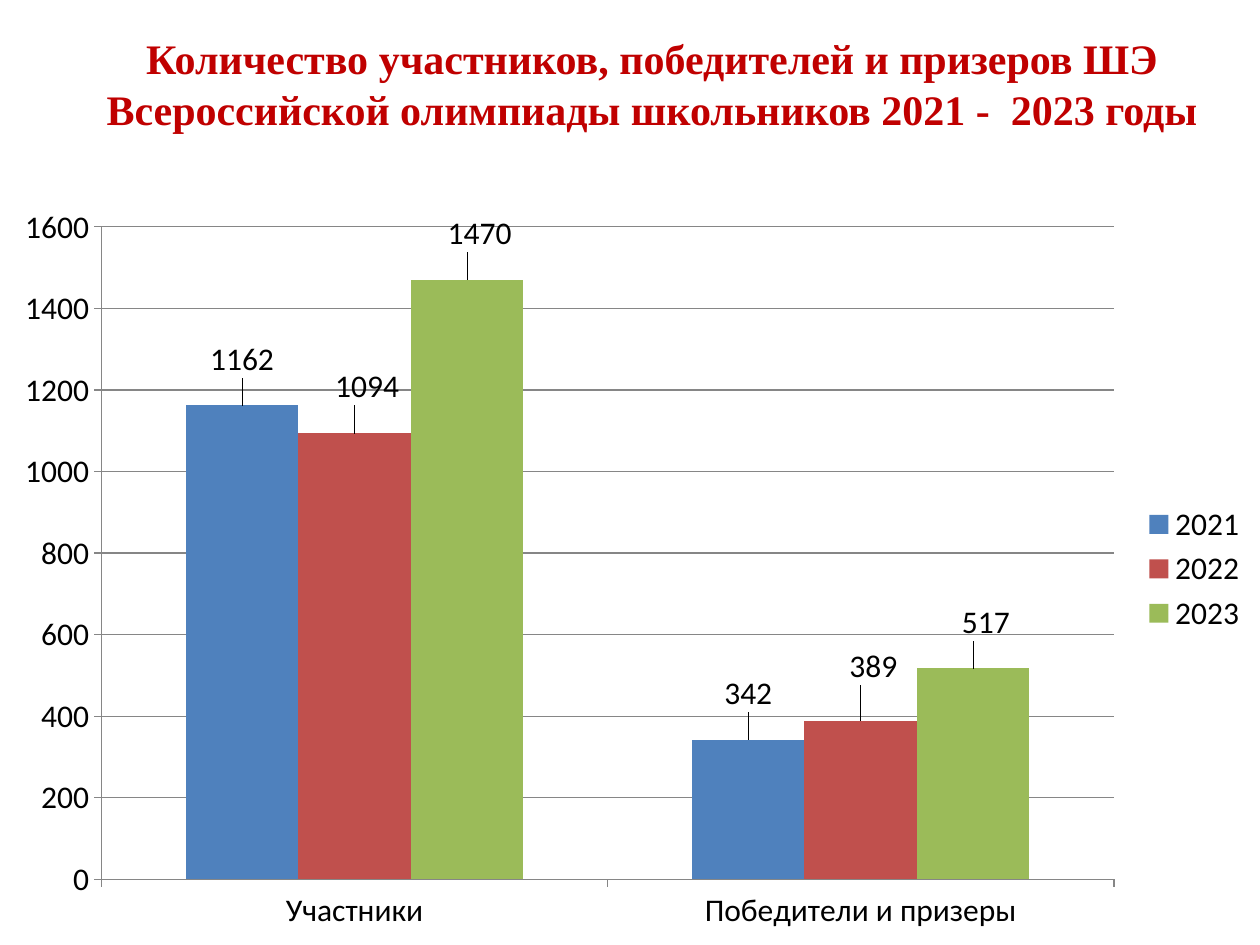
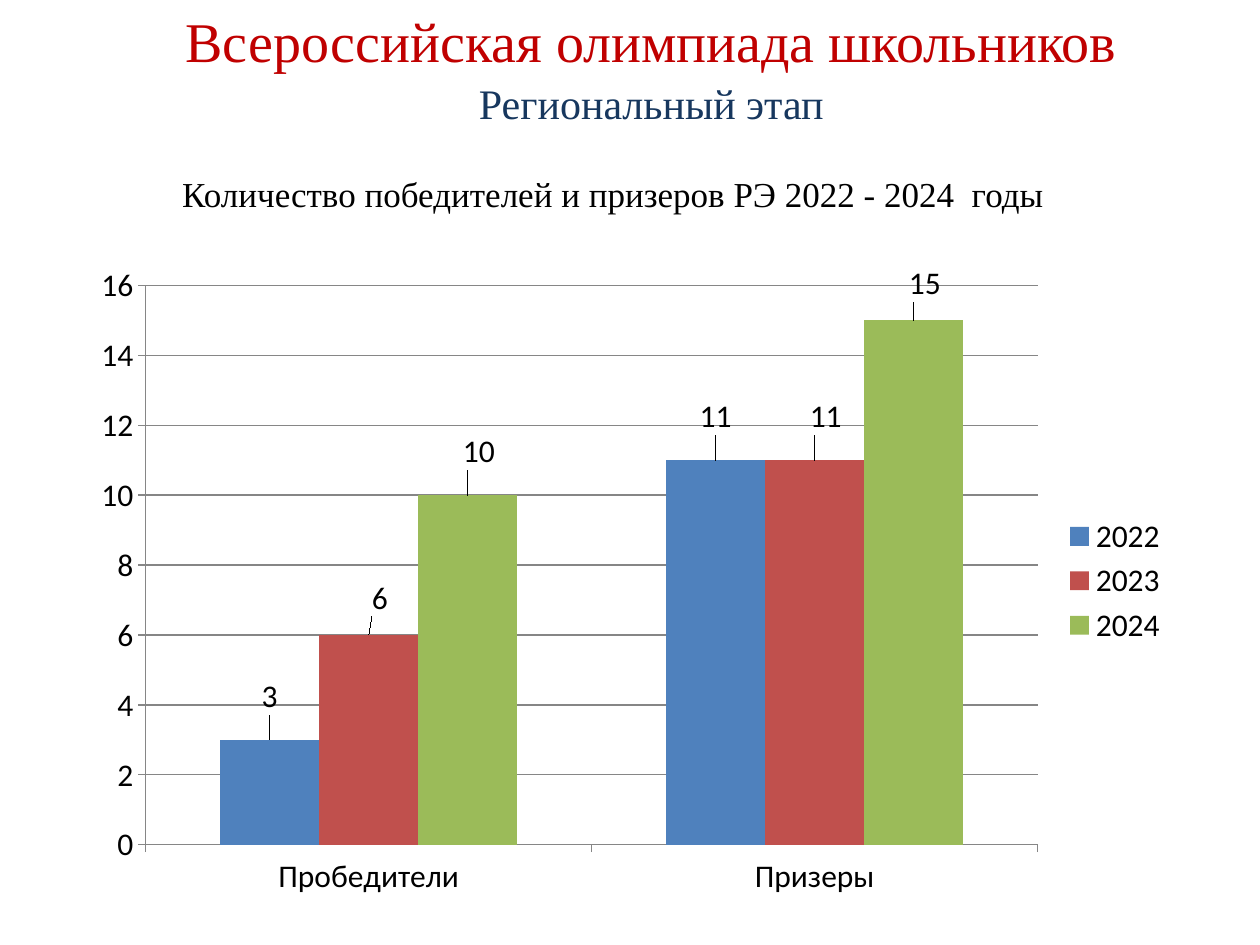
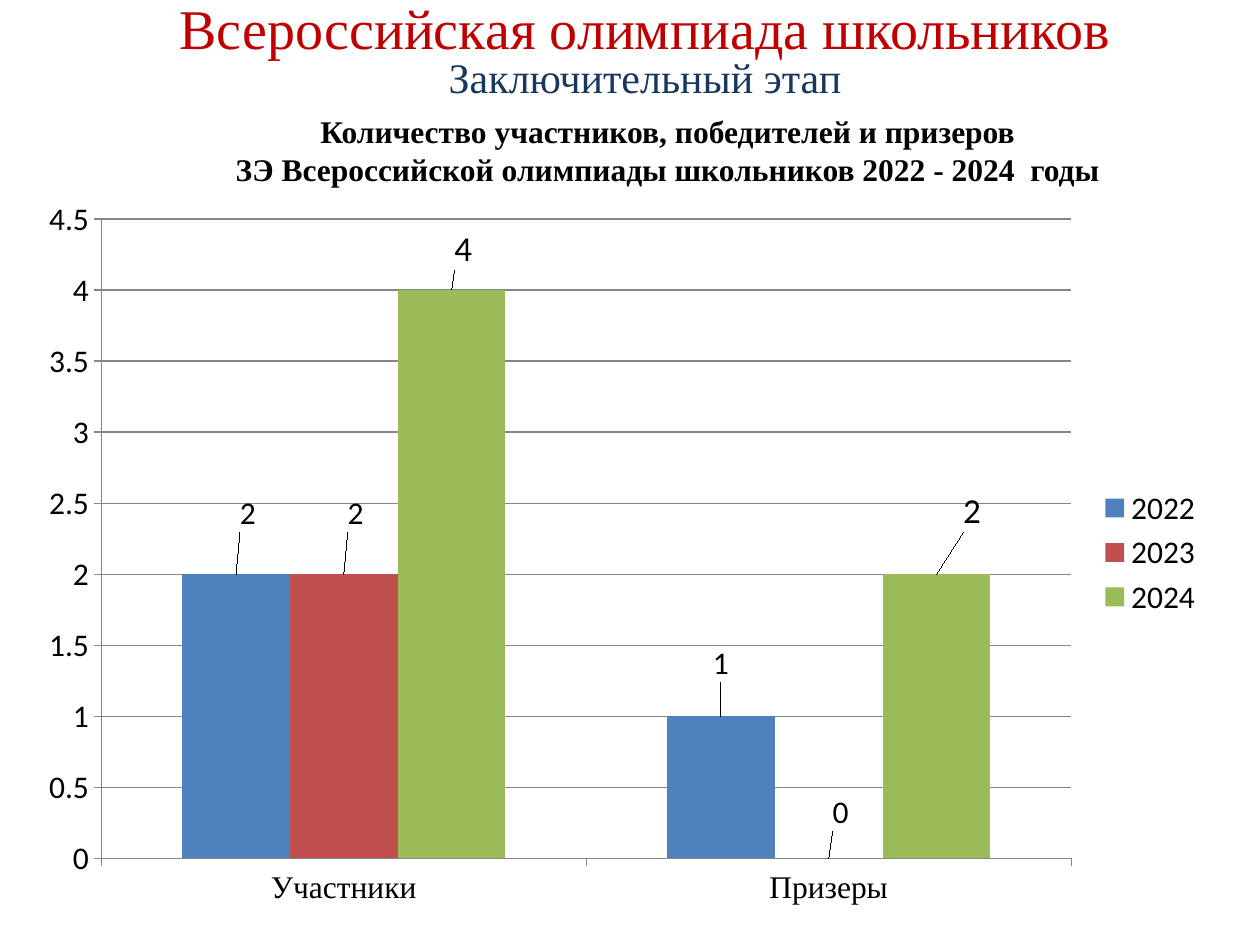
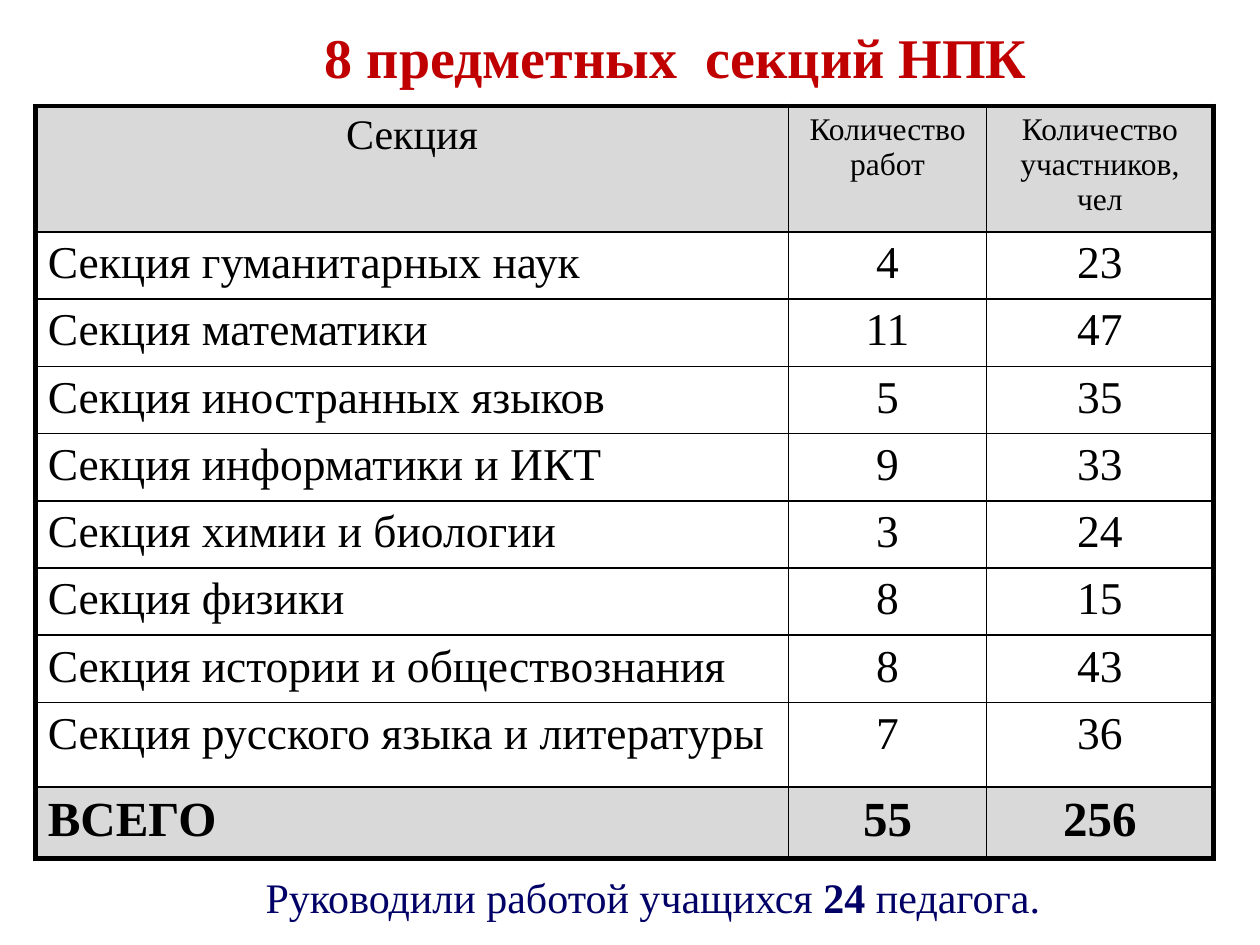
from dataclasses import dataclass

from lxml.etree import SubElement
from pptx import Presentation
from pptx.chart.data import CategoryChartData as Data
from pptx.dml.color import RGBColor as Rgb
from pptx.enum.chart import XL_CHART_TYPE as Kind
from pptx.enum.chart import XL_LABEL_POSITION as Spot
from pptx.enum.chart import XL_LEGEND_POSITION as Side
from pptx.enum.chart import XL_TICK_MARK as Tick
from pptx.enum.text import MSO_AUTO_SIZE as Fit
from pptx.enum.text import PP_ALIGN as Align
from pptx.oxml import parse_xml
from pptx.oxml.ns import nsdecls, qn
from pptx.util import Inches, Pt


@dataclass(frozen=True)
class Theme:
    serif: str = "Times New Roman"
    sans: str = "Calibri"
    red: str = "C00000"
    blue: str = "17375E"
    navy: str = "000066"
    black: str = "000000"
    gray: str = "D9D9D9"
    grid: str = "868686"
    bars: tuple = ("4F81BD", "C0504D", "9BBB59")
    title: int = 32
    total: int = 28
    cell: int = 26
    head: int = 24
    note: int = 20
    small: int = 18


THEME = Theme()


def style(font, size, ink=THEME.black, bold=False, face=THEME.serif):
    font.name = face
    font.size = Pt(size)
    font.bold = bold
    font.color.rgb = Rgb.from_string(ink)


def write(frame, lines, size, ink=THEME.black, bold=False, align=Align.CENTER):
    for i, line in enumerate(lines):
        para = frame.add_paragraph() if i else frame.paragraphs[0]
        para.alignment = align
        style(para.font, size, ink, bold)
        for j, part in enumerate(line.split("*")):
            run = para.add_run()
            run.text = part
            if j % 2:
                run.font.bold = True


def add_text(slide, place, lines, size, ink=THEME.black, bold=False,
             align=Align.CENTER, wrap=True):
    frame = slide.shapes.add_textbox(*map(Inches, place)).text_frame
    frame.word_wrap = wrap
    frame.auto_size = Fit.SHAPE_TO_FIT_TEXT
    write(frame, lines, size, ink, bold, align)


def add_heads(slide, top, stage):
    add_text(slide, top, ["Всероссийская олимпиада школьников"],
             THEME.title, THEME.red)
    name, place = stage
    add_text(slide, place, [name], THEME.head, THEME.blue)


def shift(label, dx, dy):
    layout = SubElement(label, qn("c:layout"))
    label.insert(1, layout)
    manual = SubElement(layout, qn("c:manualLayout"))
    for axis, value in (("x", dx), ("y", dy)):
        SubElement(manual, qn(f"c:{axis}")).set("val", str(value))


def add_labels(bars, moves, size):
    labels = bars.data_labels
    labels.show_value = True
    labels.position = Spot.OUTSIDE_END
    style(labels.font, size, face=THEME.sans)
    for i in range(len(moves)):
        label = bars.points[i].data_label
        label.position = Spot.OUTSIDE_END
        style(label.font, size, face=THEME.sans)
    for node, move in zip(bars._element.iter(qn("c:dLbl")), moves):
        shift(node, *move)


def add_bars(slide, place, cats, rows, sizes=(THEME.small,) * 3,
             face=THEME.sans):
    data = Data()
    data.categories = cats
    for year, values, moves in rows:
        data.add_series(year, values)
    chart = slide.shapes.add_chart(
        Kind.COLUMN_CLUSTERED, *map(Inches, place), data).chart
    style(chart.font, THEME.small, face=THEME.sans)
    chart.has_title = False
    chart.has_legend = True
    chart.legend.position = Side.RIGHT
    chart.legend.include_in_layout = False
    for axis in (chart.category_axis, chart.value_axis):
        axis.major_tick_mark = Tick.OUTSIDE
        axis.format.line.color.rgb = Rgb.from_string(THEME.grid)
    style(chart.category_axis.tick_labels.font, THEME.small, face=face)
    lines = chart.value_axis.major_gridlines.format.line
    lines.color.rgb = Rgb.from_string(THEME.grid)
    plot = chart.plots[0]
    plot.gap_width = 150
    plot.overlap = 0
    plot.vary_by_categories = False
    for bars, ink, row, size in zip(plot.series, THEME.bars, rows, sizes):
        bars.format.fill.solid()
        bars.format.fill.fore_color.rgb = Rgb.from_string(ink)
        add_labels(bars, row[2], size)


def edge(cell, sides):
    props = cell._tc.get_or_add_tcPr()
    for i, (side, thick) in enumerate(zip("LRTB", sides)):
        props.insert(i, parse_xml(
            f'<a:ln{side} {nsdecls("a")} w="{Pt(3 if thick else 1)}">'
            f'<a:solidFill><a:srgbClr val="{THEME.black}"/></a:solidFill>'
            f'</a:ln{side}>'))


def add_grid(slide, place, wide, high, rows):
    last, end = len(rows) - 1, len(wide) - 1
    table = slide.shapes.add_table(
        len(rows), len(wide), *map(Inches, place)).table
    table.first_row = table.horz_banding = False
    for col, width in zip(table.columns, wide):
        col.width = Inches(width)
    for r, (row, height) in enumerate(zip(rows, high)):
        table.rows[r].height = Inches(height)
        for c, text in enumerate(row):
            cell = table.cell(r, c)
            if r in (0, last):
                cell.fill.solid()
                cell.fill.fore_color.rgb = Rgb.from_string(THEME.gray)
            else:
                cell.fill.background()
            edge(cell, (c == 0, c == end, r == 0, r == last))
            if r == 0:
                size = THEME.small if c else THEME.head
            else:
                size = THEME.total if r == last else THEME.cell
            align = Align.LEFT if r and not c else Align.CENTER
            write(cell.text_frame, text.split("\n"), size,
                  bold=r == last, align=align)


def school(slide):
    add_bars(slide, (0, 1.53, 10, 5.97),
             ("Участники", "Победители и призеры"), (
                 ("2021", (1162, 342), ((0, -0.03), (0, -0.03))),
                 ("2022", (1094, 389), ((0.01, -0.03), (0.01, -0.04))),
                 ("2023", (1470, 517), ((0.01, -0.03), (0.01, -0.03)))))
    add_text(slide, (0.59, 0.21, 9.17, 0.91),
             ["Количество участников, победителей и призеров ШЭ "
              "Всероссийской олимпиады школьников 2021 -  2023 годы"],
             THEME.head, THEME.red, True)


def region(slide):
    add_heads(slide, (0.34, 0, 9.66, 0.64),
              ("Региональный этап", (0.34, 0.57, 9.66, 0.5)))
    add_text(slide, (0.12, 1.32, 9.49, 0.44),
             ["Количество победителей и призеров РЭ 2022 - 2024  годы"],
             THEME.note)
    add_bars(slide, (0.63, 2.01, 8.74, 5.2), ("Пробедители", "Призеры"), (
        ("2022", (3, 11), ((0, -0.03), (0, -0.03))),
        ("2023", (6, 11), ((0.01, -0.02), (0.01, -0.03))),
        ("2024", (10, 15), ((0.01, -0.03), (0.01, -0.02)))))


def final(slide):
    add_bars(slide, (0.2, 1.47, 9.45, 5.83), ("Участники", "Призеры"), (
        ("2022", (2, 1), ((0.01, -0.05), (0, -0.04))),
        ("2023", (2, 0), ((0.01, -0.05), (0.01, -0.03))),
        ("2024", (4, 2), ((0.01, -0.02), (0.03, -0.05)))),
        (THEME.small, THEME.small, THEME.note), THEME.serif)
    add_heads(slide, (1.29, -0.1, 7.66, 0.64),
              ("Заключительный этап", (0.12, 0.36, 10, 0.5)))
    add_text(slide, (0.43, 0.84, 9.74, 0.71),
             ["Количество участников, победителей и призеров",
              "ЗЭ Всероссийской олимпиады школьников 2022 - 2024  годы"],
             THEME.small, bold=True)


def panels(slide):
    add_grid(slide, (0.28, 0.84, 9.36, 5.97), (5.98, 1.57, 1.8),
             (0.99, *[0.53] * 7, 0.67, 0.53), (
                 ("Секция", "Количество работ",
                  "Количество\nучастников, чел"),
                 ("Секция гуманитарных наук", "4", "23"),
                 ("Секция математики", "11", "47"),
                 ("Секция иностранных языков", "5", "35"),
                 ("Секция информатики и ИКТ", "9", "33"),
                 ("Секция химии и биологии", "3", "24"),
                 ("Секция физики", "8", "15"),
                 ("Секция истории и обществознания", "8", "43"),
                 ("Секция русского языка и литературы", "7", "36"),
                 ("ВСЕГО", "55", "256")))
    add_text(slide, (2.48, 0.13, 5.83, 0.64), ["8 предметных  секций НПК"],
             THEME.title, THEME.red, True, Align.LEFT, False)
    add_text(slide, (2.01, 6.87, 6.41, 0.5),
             ["Руководили работой учащихся *24* педагога."],
             THEME.head, THEME.navy, align=Align.LEFT, wrap=False)


def main():
    deck = Presentation()
    deck.slide_width, deck.slide_height = Inches(10), Inches(7.5)
    for build in (school, region, final, panels):
        build(deck.slides.add_slide(deck.slide_layouts[6]))
    deck.save("out.pptx")


if __name__ == "__main__":
    main()
